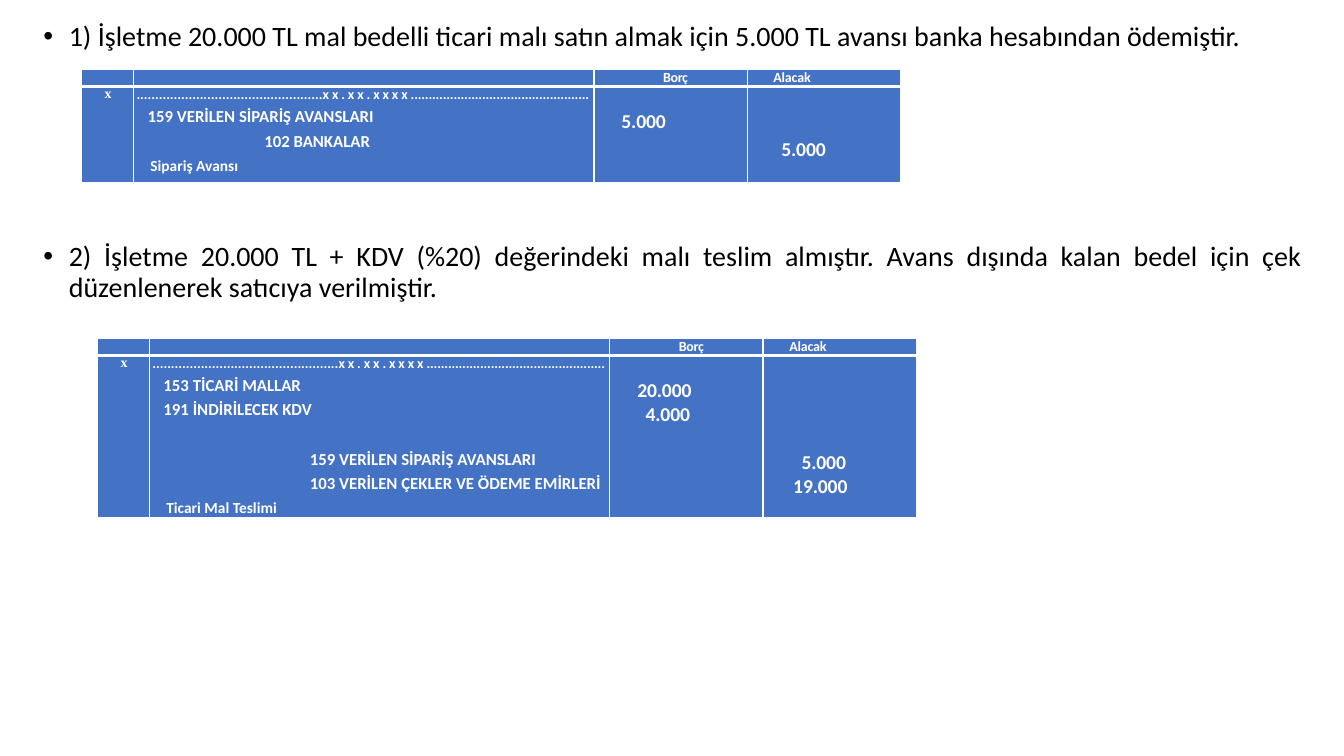
from dataclasses import dataclass

import pptx
import pptx.dml.color
import pptx.enum.text
import pptx.oxml.ns
import pptx.presentation
import pptx.slide
import pptx.table
import pptx.util
from lxml import etree
from pptx.dml.color import RGBColor
from pptx.enum.text import PP_ALIGN
from pptx.util import Cm, Pt

BLACK = RGBColor(0x00, 0x00, 0x00)
WHITE = RGBColor(0xFF, 0xFF, 0xFF)
BLUE = RGBColor(0x44, 0x72, 0xC4)

COLUMN_WIDTHS = (1.3, 11.61, 3.86, 3.86)  # cm
HEADER_HEIGHT = 0.41  # cm
DOTS = "." * 50


@dataclass(frozen=True)
class Line:
    """One line in a cell: indent in cm, size and spacings in points."""
    text: str
    indent: float = 0
    size: float = 12
    before: float = 0
    spacing: float = 0
    font: str = "Calibri"
    align: PP_ALIGN = PP_ALIGN.LEFT
    more: tuple[tuple[str, float], ...] = ()  # further runs: text, spacing


@dataclass(frozen=True)
class CellText:
    lines: tuple[Line, ...] = ()
    top: float = 0  # points


@dataclass(frozen=True)
class Journal:
    left: float
    top: float
    body_height: float
    entries: tuple[Line, ...]
    debit: CellText
    credit: CellText


def amount(text: str, indent: float) -> Line:
    return Line(text, indent, 14, spacing=-0.1)


HEADER = (
    CellText(),
    CellText(),
    CellText((Line("Borç", 0.25, 10, spacing=-0.2, align=PP_ALIGN.CENTER),)),
    CellText((Line("Alacak", 0.66, 10, spacing=-0.1),)),
)
MARK = CellText((Line("x", 0.03, 10, spacing=-0.5, font="Times New Roman",
                      align=PP_ALIGN.CENTER),))
DATE = Line(DOTS, 0.08, 10, more=(("xx.xx.xxxx", 2.1), (DOTS, -0.1)))

JOURNALS = (
    Journal(
        2.06, 1.75, 2.41,
        (Line("159 VERİLEN SİPARİŞ AVANSLARI", 0.36, before=2.5),
         Line("102 BANKALAR", 3.3, before=3),
         Line("Sipariş Avansı", 0.43, 11, before=3)),
        CellText((amount("5.000", 0.69),), 17),
        CellText((amount("5.000", 0.86),), 37),
    ),
    Journal(
        2.46, 8.53, 4.09,
        (Line("153 TİCARİ MALLAR", 0.36, before=2.5),
         Line("191 İNDİRİLECEK KDV", 0.36, before=2.5),
         Line("159 VERİLEN SİPARİŞ AVANSLARI", 4.05, before=20.6),
         Line("103 VERİLEN ÇEKLER VE ÖDEME EMİRLERİ", 4.05, before=3),
         Line("Ticari Mal Teslimi", 0.43, 11, before=3)),
        CellText((amount("20.000", 0.69), amount("4.000", 0.9)), 17),
        CellText((amount("5.000", 0.97), amount("19.000", 0.76)), 68),
    ),
)

# Bulleted sentences with the space before each, in points
BULLETS = (
    ("1) İşletme 20.000 TL mal bedelli ticari malı satın almak için "
     "5.000 TL avansı banka hesabından ödemiştir.", 0),
    ("2) İşletme 20.000 TL + KDV (%20) değerindeki malı teslim almıştır. "
     "Avans dışında kalan bedel için çek düzenlenerek satıcıya verilmiştir.", 136),
)


def set_border(cell: pptx.table._Cell, side: str, width: float) -> None:
    """Add a white cell border; call before the fill is set."""
    ln = etree.SubElement(cell._tc.get_or_add_tcPr(), pptx.oxml.ns.qn(f"a:{side}"),
                          w=str(Pt(width)))
    fill = etree.SubElement(ln, pptx.oxml.ns.qn("a:solidFill"))
    etree.SubElement(fill, pptx.oxml.ns.qn("a:srgbClr"), val=str(WHITE))


def write_line(p: pptx.text.text._Paragraph, line: Line) -> None:
    p.text = line.text
    for text, _ in line.more:
        p.add_run().text = text
    p.alignment = line.align
    p.space_before = Pt(line.before)
    pPr = p._p.get_or_add_pPr()
    pPr.set("marL", str(Cm(line.indent)))
    pPr.set("indent", "0")
    spacings = (line.spacing, *(spacing for _, spacing in line.more))
    for r, spacing in zip(p.runs, spacings):
        r.font.size = Pt(line.size)
        r.font.name = line.font
        r.font.bold = True
        r.font.color.rgb = WHITE
        r._r.get_or_add_rPr().set("spc", str(round(spacing * 100)))


def fill_cell(cell: pptx.table._Cell, content: CellText, is_header: bool) -> None:
    cell.margin_left = cell.margin_right = cell.margin_bottom = 0
    cell.margin_top = Pt(content.top)
    set_border(cell, "lnL", 1)
    set_border(cell, "lnR", 1)
    set_border(cell, "lnT", 1 if is_header else 3)
    set_border(cell, "lnB", 3 if is_header else 1)
    cell.fill.solid()
    cell.fill.fore_color.rgb = BLUE
    tf = cell.text_frame
    for i, line in enumerate(content.lines):
        write_line(tf.add_paragraph() if i else tf.paragraphs[0], line)
    if not content.lines:  # keeps the empty cell as low as its row
        etree.SubElement(tf.paragraphs[0]._p, pptx.oxml.ns.qn("a:endParaRPr"), sz="1000")


def add_journal(s: pptx.slide.Slide, journal: Journal) -> None:
    rows = (HEADER, (MARK, CellText((DATE, *journal.entries)),
                     journal.debit, journal.credit))
    heights = (HEADER_HEIGHT, journal.body_height)
    table = s.shapes.add_table(
        len(rows), len(COLUMN_WIDTHS), Cm(journal.left), Cm(journal.top),
        Cm(sum(COLUMN_WIDTHS)), Cm(sum(heights))).table
    table.first_row = table.horz_banding = False
    for column, width in zip(table.columns, COLUMN_WIDTHS):
        column.width = Cm(width)
    for i, (row, height) in enumerate(zip(rows, heights)):
        table.rows[i].height = Cm(height)
        for j, content in enumerate(row):
            fill_cell(table.cell(i, j), content, i == 0)


def add_bullets(s: pptx.slide.Slide) -> None:
    body = s.placeholders[1]
    body.left, body.top, body.width, body.height = Cm(0.84), Cm(0.43), Cm(32.23), Cm(18.24)
    tf = body.text_frame
    tf.auto_size = pptx.enum.text.MSO_AUTO_SIZE.NONE
    tf.text = "\n".join(text for text, _ in BULLETS)
    for p, (_, before) in zip(tf.paragraphs, BULLETS):
        p.alignment = PP_ALIGN.JUSTIFY
        p.line_spacing = 0.9
        p.space_before = Pt(before)
        pPr = p._p.get_or_add_pPr()
        pPr.set("marL", str(Cm(0.64)))
        pPr.set("indent", str(Cm(-0.64)))
        font = p.runs[0].font
        font.size, font.name = Pt(20), "Calibri"
        font.color.rgb = BLACK


def main() -> None:
    prs = pptx.Presentation()
    prs.slide_width, prs.slide_height = Cm(33.87), Cm(19.05)
    s = prs.slides.add_slide(prs.slide_layouts[1])

    # The slide has no title
    title = s.shapes.title._element
    title.getparent().remove(title)

    # Transactions and their journal entries
    add_bullets(s)
    for journal in JOURNALS:
        add_journal(s, journal)

    prs.save("out.pptx")


if __name__ == "__main__":
    main()
